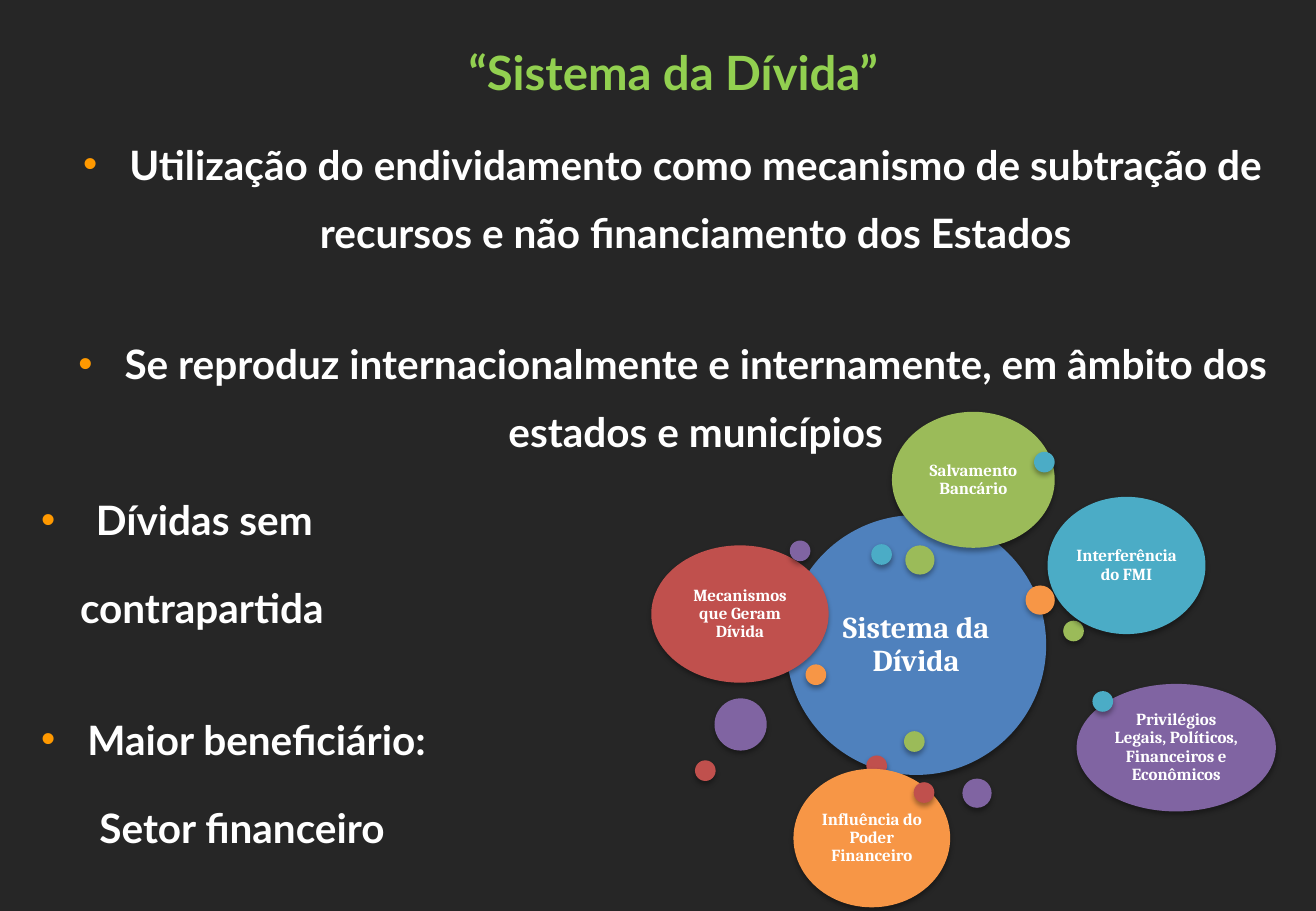
from dataclasses import dataclass
from lxml.etree import SubElement as Sub
from pptx import Presentation
from pptx.dml.color import RGBColor as RGB
from pptx.enum.shapes import MSO_SHAPE as Form
from pptx.enum.text import MSO_ANCHOR as Anchor, PP_ALIGN as Align
from pptx.oxml.ns import qn
from pptx.util import Inches, Pt

WIDE, HIGH = 10.83, 7.5


@dataclass(frozen=True)
class Theme:
    back: str = "262626"
    title: str = "92D050"
    text: str = "FFFFFF"
    mark: str = "FF9900"
    blue: str = "4F81BD"
    red: str = "C0504D"
    green: str = "9BBB59"
    purple: str = "8064A2"
    teal: str = "4BACC6"
    orange: str = "F79646"
    sans: str = "Lato"
    serif: str = "Cambria"
    head: int = 28
    body: int = 24
    hub: int = 18
    note: int = 10


T = Theme()

# Dot diameters, as percent of the slide width
SMALL, MID, LARGE = 1.57, 2.22, 3.97

# Text, centred, space before (pt), left margin and first indent (in), bullet
POINTS = [
    ("Utilização do endividamento como mecanismo de subtração de recursos "
     "e não financiamento dos Estados", True, 0, 0.41, -0.38, True),
    ("Se reproduz internacionalmente e internamente, em âmbito dos "
     "estados e municípios", True, 37.5, 0.41, -0.38, True),
    ("Dívidas sem", False, 12, 0.48, -0.45, True),
    ("contrapartida", False, 12, 0.35, 0, False),
    ("Maior beneficiário:", False, 37.5, 0.41, -0.38, True),
    ("Setor financeiro", False, 12, 0.51, 0, False),
]

# Back to front: colour, centre x and y, width, [height, text], in percent
BALLS = [
    (T.blue, 69.62, 70.8, 19.76, 28.53, "Sistema da Dívida"),
    (T.red, 66.62, 84.07, SMALL),
    (T.green, 81.58, 69.27, SMALL),
    (T.purple, 74.24, 87.07, MID),
    (T.teal, 66.99, 60.87, SMALL),
    (T.orange, 62, 74.07, SMALL),
    (T.red, 56.23, 67.4, 13.48, 15.07, "Mecanismos que Geram Dívida"),
    (T.green, 69.9, 61.47, MID),
    (T.purple, 56.28, 79.53, LARGE),
    (T.teal, 85.6, 62.07, 12, 15.07, "Interferência do FMI"),
    (T.orange, 79.04, 65.87, MID),
    (T.red, 53.6, 84.6, SMALL),
    (T.green, 69.48, 81.4, SMALL),
    (T.purple, 89.38, 82.07, 15.14, 14,
     "Privilégios Legais, Políticos, Financeiros e Econômicos"),
    (T.teal, 83.8, 77, SMALL),
    (T.orange, 66.25, 92, 11.91, 15.2, "Influência do Poder Financeiro"),
    (T.red, 70.22, 87, SMALL),
    (T.green, 73.96, 52.67, 12.37, 14.93, "Salvamento Bancário"),
    (T.purple, 60.8, 60.47, SMALL),
    (T.teal, 79.36, 50.73, SMALL),
]


def across(share):
    return Inches(WIDE * share / 100)


def down(share):
    return Inches(HIGH * share / 100)


def style(para, face, size, hue, align, gap):
    para.alignment = align
    para.line_spacing = gap
    for run in para.runs:
        font = run.font
        font.name, font.size, font.bold = face, Pt(size), True
        font.color.rgb = RGB.from_string(hue)


def indent(para, left, first, mark=False):
    props = para._p.get_or_add_pPr()
    props.set("marL", str(Inches(left)))
    props.set("indent", str(Inches(first)))
    if mark:
        hue = Sub(props, qn("a:buClr"))
        Sub(hue, qn("a:srgbClr"), val=T.mark)
        Sub(props, qn("a:buFont"), typeface="Arial")
        Sub(props, qn("a:buChar"), char="•")


def add_title(slide, text):
    box = slide.shapes.title
    box.left, box.top = across(1.94), down(2.8)
    box.width, box.height = across(98.06), down(9.5)
    frame = box.text_frame
    frame.text = text
    frame.vertical_anchor = Anchor.TOP
    para = frame.paragraphs[0]
    style(para, T.sans, T.head, T.title, Align.CENTER, 1.2)
    indent(para, 0.04, 0)


def add_points(slide):
    box = slide.shapes.add_textbox(across(1.94), down(12.53),
                                   across(98.06), down(82))
    frame = box.text_frame
    frame.word_wrap = True
    for i, (text, mid, space, left, first, mark) in enumerate(POINTS):
        para = frame.add_paragraph() if i else frame.paragraphs[0]
        para.text = text
        style(para, T.sans, T.body, T.text,
              Align.CENTER if mid else Align.LEFT, 1.4)
        para.space_before = Pt(space)
        indent(para, left, first, mark)


def add_shadow(shape):
    shape.shadow.inherit = False
    effects = shape._element.spPr.find(qn("a:effectLst"))
    shade = Sub(effects, qn("a:outerShdw"), blurRad=str(Pt(3.1)),
                dist=str(Pt(1.8)), dir="5400000", rotWithShape="0")
    hue = Sub(shade, qn("a:srgbClr"), val="000000")
    Sub(hue, qn("a:alpha"), val="35000")


def add_ball(slide, hue, x, y, wide, high=None, text=""):
    high = high or wide * WIDE / HIGH
    ball = slide.shapes.add_shape(
        Form.OVAL, across(x - wide / 2), down(y - high / 2),
        across(wide), down(high))
    ball.fill.solid()
    ball.fill.fore_color.rgb = RGB.from_string(hue)
    ball.line.fill.background()
    add_shadow(ball)
    if text:
        frame = ball.text_frame
        frame.word_wrap = True
        frame.vertical_anchor = Anchor.MIDDLE
        frame.margin_left = frame.margin_right = Inches(0.03)
        frame.margin_top = frame.margin_bottom = Inches(0.03)
        frame.text = text
        size = T.hub if hue == T.blue else T.note
        style(frame.paragraphs[0], T.serif, size, T.text, Align.CENTER, 0.9)


def main():
    deck = Presentation()
    deck.slide_width, deck.slide_height = Inches(WIDE), Inches(HIGH)
    slide = deck.slides.add_slide(deck.slide_layouts[5])

    # Background
    fill = slide.background.fill
    fill.solid()
    fill.fore_color.rgb = RGB.from_string(T.back)

    # Title and bullet points
    add_title(slide, "“Sistema da Dívida”")
    add_points(slide)

    # Diagram of the system
    for ball in BALLS:
        add_ball(slide, *ball)

    deck.save("out.pptx")


if __name__ == "__main__":
    main()
